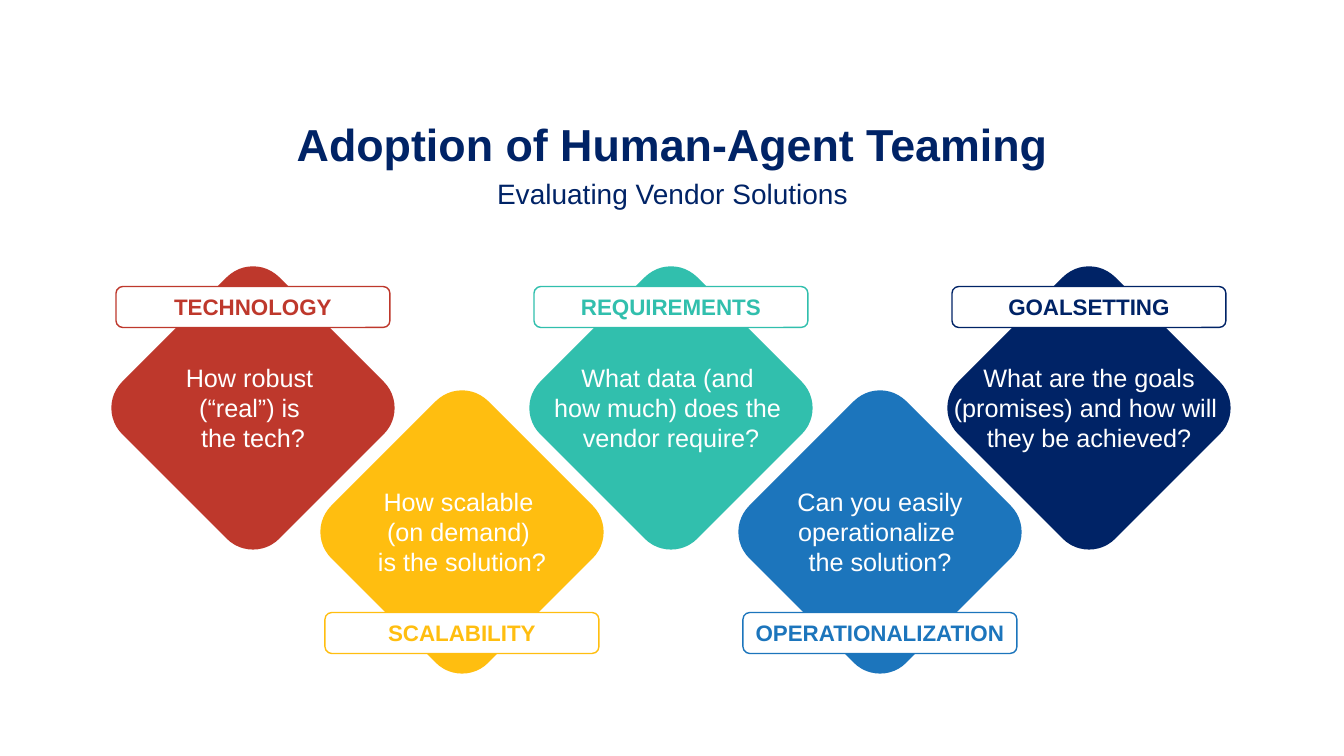
import pptx
import pptx.util
import pptx.dml.color
import pptx.enum.shapes
import pptx.enum.text

COLORS = {
    "navy": "002366",
    "red": "BE382C",
    "yellow": "FFBE10",
    "teal": "31BFAD",
    "blue": "1C75BC",
    "white": "FFFFFF",
}
TITLE = "Adoption of Human-Agent Teaming"
SUBTITLE = "Evaluating Vendor Solutions"
# label, question (\v is a line break), color
TOPICS = [
    ("TECHNOLOGY", "How robust \v(“real”) is \vthe tech?", "red"),
    ("SCALABILITY", "How scalable \v(on demand) \vis the solution?", "yellow"),
    ("REQUIREMENTS", "What data (and \vhow much) does the \vvendor require?", "teal"),
    ("OPERATIONALIZATION", "Can you easily\voperationalize \vthe solution?", "blue"),
    ("GOALSETTING", "What are the goals (promises) and how will \vthey be achieved?", "navy"),
]

# Lengths in px
PX = 914400 / 100.8
SLIDE_W, SLIDE_H = 1344, 756
FIRST_X, STEP_X = 253, 209
UPPER_Y, LOWER_Y = 408, 532
DIAMOND_SIDE = 222
QUESTION_W, QUESTION_H = 313, 92
LABEL_W, LABEL_H, LABEL_OFFSET = 274, 41, 101
LABEL_INSET = 5


def px(length):
    return pptx.util.Emu(round(length * PX))


def rgb(name):
    return pptx.dml.color.RGBColor.from_string(COLORS[name])


def centered(cx, cy, width, height):
    """Left, top, width and height in EMU of a box around a center."""
    return px(cx - width / 2), px(cy - height / 2), px(width), px(height)


def write(shape, text, size, color, bold=False, inset=0, anchor="TOP"):
    frame = shape.text_frame
    frame.text = text
    frame.word_wrap = True
    frame.auto_size = pptx.enum.text.MSO_AUTO_SIZE.NONE
    frame.vertical_anchor = pptx.enum.text.MSO_ANCHOR[anchor]
    frame.margin_left = frame.margin_right = px(inset)
    frame.margin_top = frame.margin_bottom = px(inset)
    paragraph = frame.paragraphs[0]
    paragraph.alignment = pptx.enum.text.PP_ALIGN.CENTER
    paragraph.space_before = pptx.util.Pt(0)
    for run in paragraph.runs:
        run.font.name = "Arial"
        run.font.size = pptx.util.Pt(size)
        run.font.bold = bold
        run.font.color.rgb = rgb(color)


def add_round_rect(slide, box, fill, line=None):
    shape = slide.shapes.add_shape(
        pptx.enum.shapes.MSO_SHAPE.ROUNDED_RECTANGLE, *box)
    shape.shadow.inherit = False
    shape.fill.solid()
    shape.fill.fore_color.rgb = rgb(fill)
    if line:
        shape.line.color.rgb = rgb(line)
        shape.line.width = pptx.util.Pt(1)
    else:
        shape.line.fill.background()
    return shape


def add_topic(slide, index, label, question, color):
    cx = FIRST_X + index * STEP_X
    lower = index % 2 == 1
    cy = LOWER_Y if lower else UPPER_Y
    label_y = cy + (LABEL_OFFSET if lower else -LABEL_OFFSET)

    diamond = add_round_rect(
        slide, centered(cx, cy, DIAMOND_SIDE, DIAMOND_SIDE), color)
    diamond.rotation = 45

    question_box = slide.shapes.add_textbox(
        *centered(cx, cy, QUESTION_W, QUESTION_H))
    write(question_box, question, 18, "white")

    label_box = add_round_rect(
        slide, centered(cx, label_y, LABEL_W, LABEL_H), "white", color)
    write(label_box, label, 16, color, True, LABEL_INSET, "MIDDLE")


def place(shape, left, top, width, height):
    shape.left, shape.top = px(left), px(top)
    shape.width, shape.height = px(width), px(height)


def main():
    deck = pptx.Presentation()
    deck.slide_width, deck.slide_height = px(SLIDE_W), px(SLIDE_H)
    slide = deck.slides.add_slide(deck.slide_layouts[0])

    title, subtitle = slide.shapes.title, slide.placeholders[1]
    place(title, 79, 117, 1187, 54)
    write(title, TITLE, 32, "navy", True)
    place(subtitle, 79, 176, 1187, 34)
    write(subtitle, SUBTITLE, 20, "navy")

    for index, topic in enumerate(TOPICS):
        add_topic(slide, index, *topic)
    deck.save("out.pptx")


if __name__ == "__main__":
    main()
